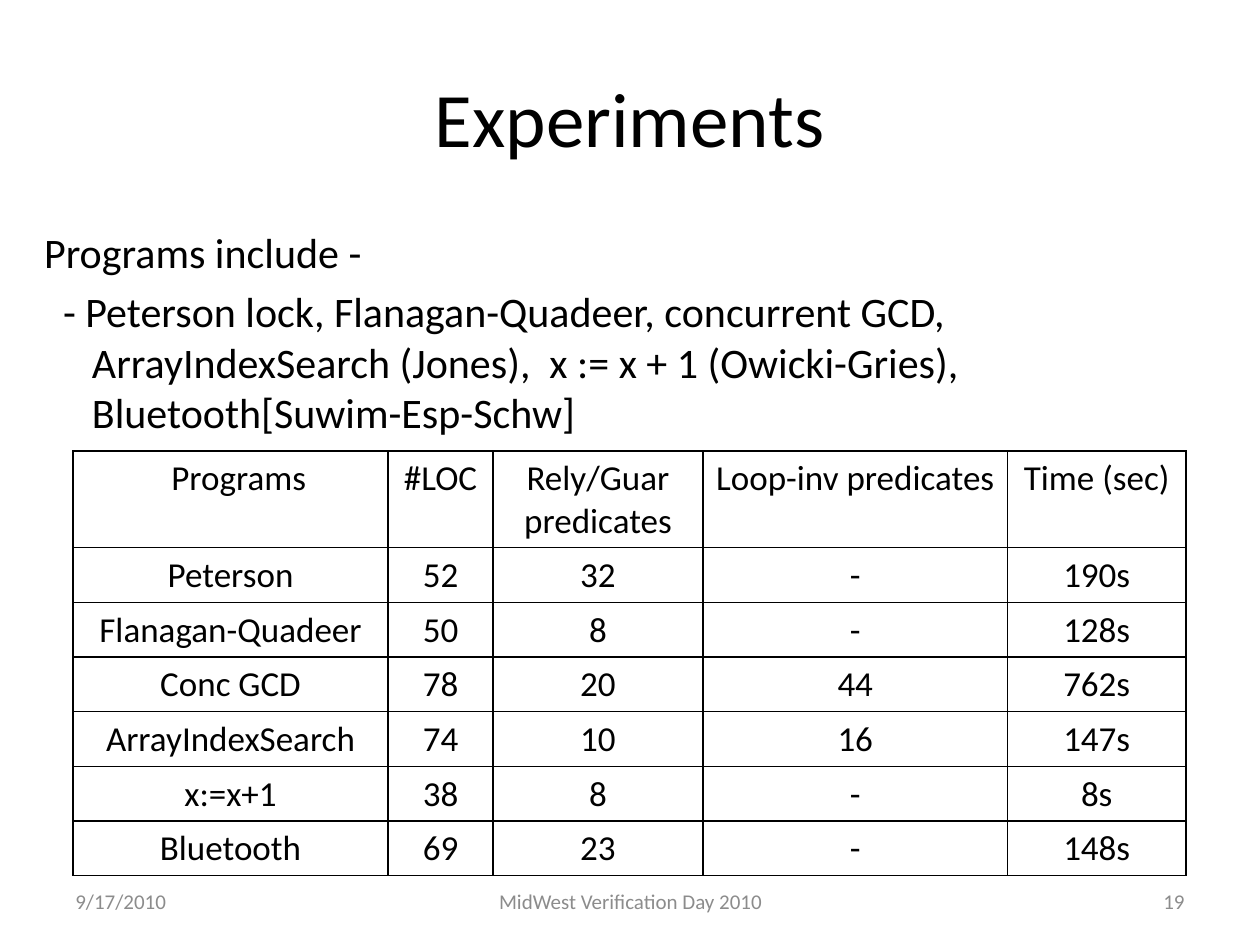
from lxml import etree
from pptx import Presentation
from pptx import util as u
from pptx.dml.color import RGBColor
from pptx.enum import text
from pptx.oxml.ns import qn

SIZE = 10, 7.5
HEAD = "Experiments"
BODY = [
    ("Programs include -", -0.38),
    ("- Peterson lock, Flanagan-Quadeer, concurrent GCD, ArrayIndexSearch (Jones),  "
     "x := x + 1 (Owicki-Gries), Bluetooth[Suwim-Esp-Schw]", -0.23),
]
FOOT = [
    ("9/17/2010", 0.5, 2.33, "LEFT"),
    ("MidWest Verification Day 2010", 3.42, 3.17, "CENTER"),
    ("19", 7.17, 2.33, "RIGHT"),
]
ROWS = [
    ("Programs", "#LOC", "Rely/Guar predicates", "Loop-inv predicates", "Time (sec)"),
    ("Peterson", "52", "32", "-", "190s"),
    ("Flanagan-Quadeer", "50", "8", "-", "128s"),
    ("Conc GCD", "78", "20", "44", "762s"),
    ("ArrayIndexSearch", "74", "10", "16", "147s"),
    ("x:=x+1", "38", "8", "-", "8s"),
    ("Bluetooth", "69", "23", "-", "148s"),
]
COLS = 30, 10, 20, 29, 17
UNIT = 1 / 12
HIGH = 0.41


def tint(code):
    return RGBColor.from_string(code)


def put(obj, vals):
    for key, val in vals.items():
        setattr(obj, key, val)


def place(shape, *box):
    put(shape, dict(zip(("left", "top", "width", "height"), map(u.Inches, box))))


def write(para, words, size, side, code="000000"):
    para.text = words
    para.alignment = getattr(text.PP_ALIGN, side)
    put(para.font, {"name": "Calibri", "size": u.Pt(size)})
    para.font.color.rgb = tint(code)


def edge(cell):
    props = cell._tc.get_or_add_tcPr()
    for side in "LRTB":
        line = etree.SubElement(props, qn("a:ln" + side), w=str(u.Pt(1)))
        fill = etree.SubElement(line, qn("a:solidFill"))
        etree.SubElement(fill, qn("a:srgbClr"), val="000000")


def main():
    deck = Presentation()
    put(deck, {"slide_width": u.Inches(SIZE[0]), "slide_height": u.Inches(SIZE[1])})
    slide = deck.slides.add_slide(deck.slide_layouts[1])

    title, body = slide.placeholders
    place(title, 0.5, 0.3, 9, 1.25)
    write(title.text_frame.paragraphs[0], HEAD, 44, "CENTER")

    place(body, 0.25, 1.75, 9.58, 4.95)
    frame = body.text_frame
    frame.auto_size = text.MSO_AUTO_SIZE.NONE
    for i, (words, dent) in enumerate(BODY):
        para = frame.add_paragraph() if i else frame.paragraphs[0]
        write(para, words, 24, "LEFT")
        props = para._p.get_or_add_pPr()
        props.set("marL", str(u.Inches(0.38)))
        props.set("indent", str(u.Inches(dent)))
        etree.SubElement(props, qn("a:buNone"))

    for words, left, width, side in FOOT:
        box = slide.shapes.add_textbox(0, 0, 0, 0)
        place(box, left, 6.95, width, 0.4)
        put(box.text_frame, {"word_wrap": True, "vertical_anchor": text.MSO_ANCHOR.MIDDLE})
        write(box.text_frame.paragraphs[0], words, 12, side, "8C8C8C")

    spot = map(u.Inches, (0.58, 3.58, sum(COLS) * UNIT, HIGH * len(ROWS)))
    grid = slide.shapes.add_table(len(ROWS), len(COLS), *spot).table
    put(grid, {"first_row": False, "horz_banding": False})
    for col, span in zip(grid.columns, COLS):
        col.width = u.Inches(span * UNIT)
    for row, vals in zip(grid.rows, ROWS):
        row.height = u.Inches(HIGH)
        for cell, words in zip(row.cells, vals):
            write(cell.text_frame.paragraphs[0], words, 20, "CENTER")
            edge(cell)
            cell.fill.solid()
            cell.fill.fore_color.rgb = tint("FFFFFF")
    grid.cell(0, 0).margin_left = u.Inches(0.23)

    deck.save("out.pptx")


if __name__ == "__main__":
    main()
